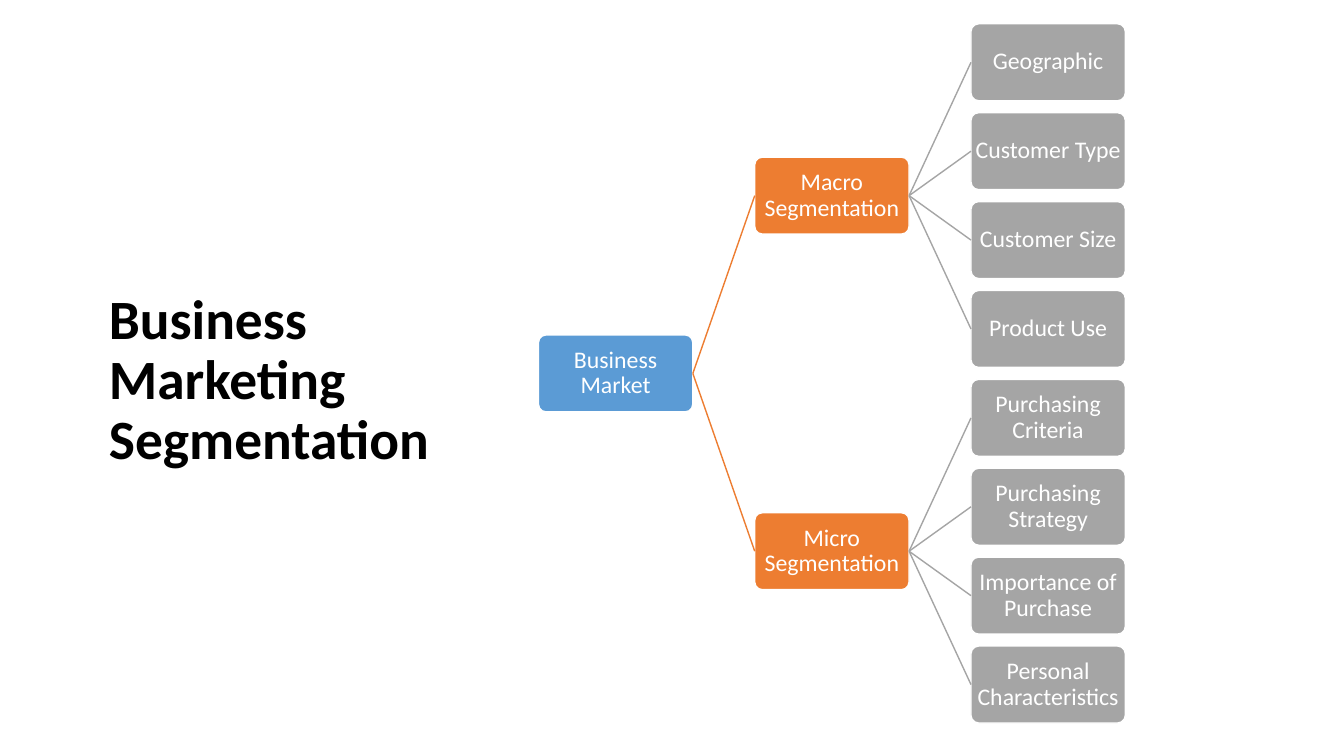
from dataclasses import dataclass

from lxml import etree
from pptx import Presentation
from pptx import util as u
from pptx.dml.color import RGBColor
from pptx.enum import shapes, text
from pptx.oxml.ns import qn


@dataclass(frozen=True)
class Theme:
    font: str = "Calibri"
    ink: str = "000000"
    white: str = "FFFFFF"
    levels: tuple = ("5B9BD5", "ED7D31", "A5A5A5")
    head: float = 39.6
    label: float = 17
    rule: float = 1


THEME = Theme()

TREE = ("Business Market", [
    ("Macro Segmentation", [
        ("Geographic", []),
        ("Customer Type", []),
        ("Customer Size", []),
        ("Product Use", []),
    ]),
    ("Micro Segmentation", [
        ("Purchasing Criteria", []),
        ("Purchasing Strategy", []),
        ("Importance of Purchase", []),
        ("Personal Characteristics", []),
    ]),
])

# Tree grid in centimetres
LEFT, COL_STEP = 13.57, 5.45
FIRST_MID, ROW_STEP = 1.57, 2.24
BOX_W, BOX_H = 3.89, 1.94
INSET = 0.03
LEFT_SITE, RIGHT_SITE = 1, 3


def rgb(code):
    return RGBColor.from_string(code)


def set_text(frame, words, size, color, align, bold=False):
    frame.text = words
    frame.word_wrap = True
    frame.vertical_anchor = text.MSO_ANCHOR.MIDDLE
    par = frame.paragraphs[0]
    par.alignment = align
    par.line_spacing = 0.9
    font = par.font
    font.name, font.size, font.bold = THEME.font, u.Pt(size), bold
    font.color.rgb = rgb(color)


def add_title(slide, words):
    title = slide.shapes.title
    title.left, title.top = u.Cm(2.49), u.Cm(7.77)
    title.width, title.height = u.Cm(9.07), u.Cm(3.68)
    set_text(title.text_frame, words, THEME.head, THEME.ink,
             text.PP_ALIGN.LEFT, bold=True)
    title.text_frame.auto_size = text.MSO_AUTO_SIZE.NONE


def add_box(slide, words, level, mid):
    box = slide.shapes.add_shape(
        shapes.MSO_SHAPE.ROUNDED_RECTANGLE,
        u.Cm(LEFT + level * COL_STEP), u.Cm(mid - BOX_H / 2),
        u.Cm(BOX_W), u.Cm(BOX_H))
    box.adjustments[0] = 0.1
    box.shadow.inherit = False
    box.fill.solid()
    box.fill.fore_color.rgb = rgb(THEME.levels[level])
    box.line.color.rgb = rgb(THEME.white)
    box.line.width = u.Pt(THEME.rule)
    frame = box.text_frame
    frame.margin_left = frame.margin_right = u.Cm(INSET)
    frame.margin_top = frame.margin_bottom = u.Cm(INSET)
    set_text(frame, words, THEME.label, THEME.white, text.PP_ALIGN.CENTER)
    return box


def add_link(slide, start, end, color):
    link = slide.shapes.add_connector(
        shapes.MSO_CONNECTOR.STRAIGHT, 0, 0, 0, 0)
    link.begin_connect(start, RIGHT_SITE)
    link.end_connect(end, LEFT_SITE)
    link.line.color.rgb = rgb(color)
    link.line.width = u.Pt(THEME.rule)
    etree.SubElement(link._element.spPr, qn("a:effectLst"))


def add_tree(slide, node, rows, level=0):
    """Draw a node midway between its outer children; return box and middle."""
    words, kids = node
    drawn = [add_tree(slide, kid, rows, level + 1) for kid in kids]
    if drawn:
        mid = (drawn[0][1] + drawn[-1][1]) / 2
    else:
        mid = FIRST_MID + next(rows) * ROW_STEP
    box = add_box(slide, words, level, mid)
    for kid, _ in drawn:
        add_link(slide, box, kid, THEME.levels[level + 1])
    return box, mid


def main():
    deck = Presentation()
    deck.slide_width, deck.slide_height = u.Cm(33.87), u.Cm(19.05)
    slide = deck.slides.add_slide(deck.slide_layouts.get_by_name("Title Only"))
    add_title(slide, "Business Marketing Segmentation")
    add_tree(slide, TREE, iter(range(8)))
    deck.save("out.pptx")


if __name__ == "__main__":
    main()
